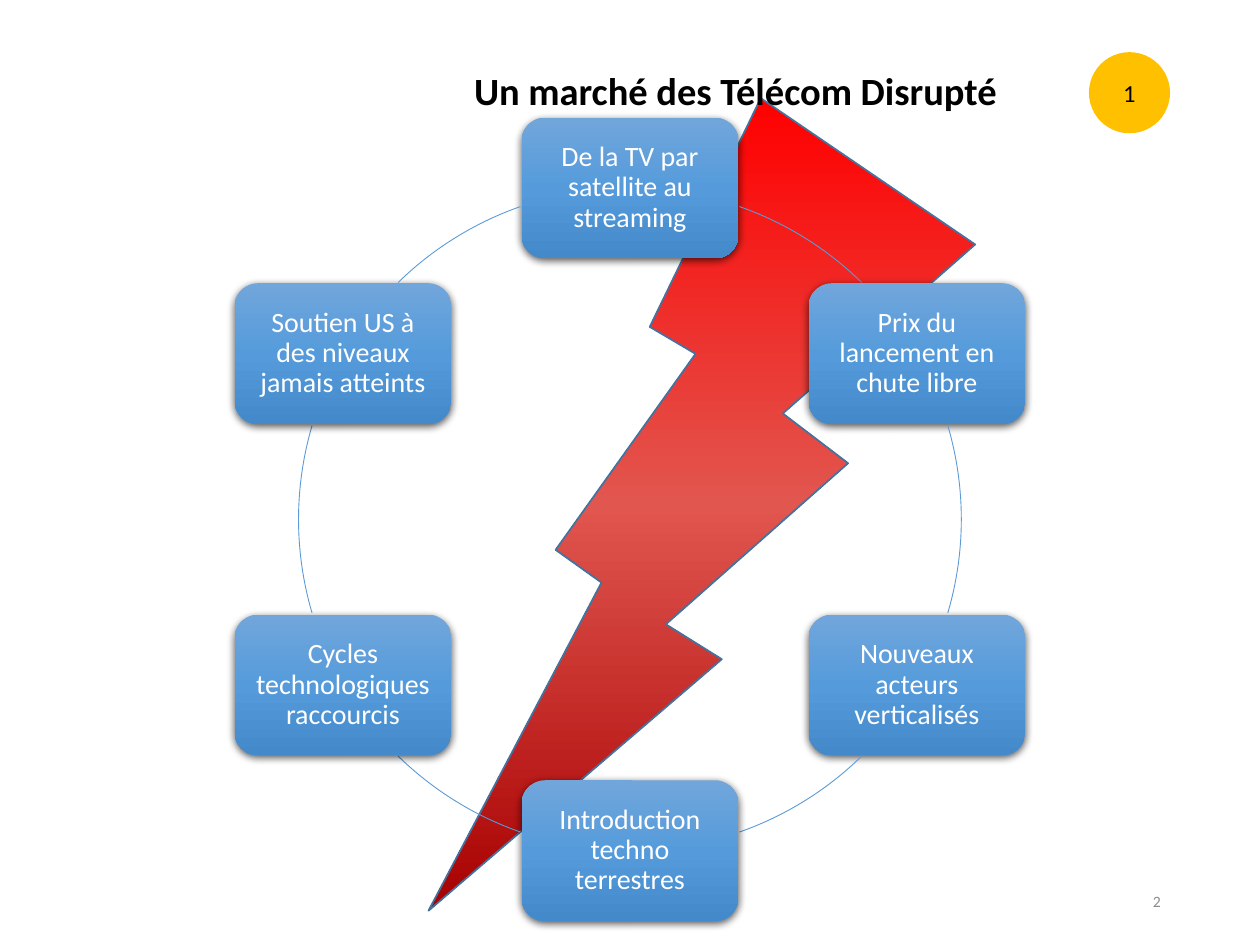
from copy import deepcopy
from math import cos, radians, sin

from lxml.etree import SubElement
from pptx import Presentation
from pptx.dml.color import RGBColor
from pptx.enum.shapes import MSO_SHAPE
from pptx.enum.text import MSO_ANCHOR, PP_ALIGN
from pptx.oxml.ns import qn
from pptx.util import Cm, Pt

COLORS = {
    "black": "000000", "white": "FFFFFF", "grey": "8C8C8C",
    "amber": "FFC000", "ring": "5B9BD5", "bolt_line": "43739E",
}
BOLT_GRADIENT = ("FF0000", "E1564F", "A70101")
STEP_GRADIENT = ("71A6DB", "559BDB", "448ACA")

# Clockwise from the top of the ring
STEPS = (
    "De la TV par satellite au streaming",
    "Prix du lancement en chute libre",
    "Nouveaux acteurs verticalisés",
    "Introduction techno terrestres",
    "Cycles technologiques raccourcis",
    "Soutien US à des niveaux jamais atteints",
)
# Visible stretches of the ring between neighbouring steps, in degrees
ARCS = ((289.3, 314.4), (343.6, 16.4), (45.6, 70.7),
        (109.3, 134.4), (163.6, 196.4), (225.6, 250.7))
CENTER_X, CENTER_Y, RADIUS = 12.7, 10.47, 6.68
STEP_WIDTH, STEP_HEIGHT = 4.37, 2.84


class SlideBuilder:
    font = "Calibri"

    def __init__(self, slide):
        self.slide = slide

    def add_text(self, shape, text, size, color, align=PP_ALIGN.CENTER,
                 bold=False, spacing=1.0, inset=None):
        frame = shape.text_frame
        frame.word_wrap = True
        frame.vertical_anchor = MSO_ANCHOR.MIDDLE
        if inset is not None:
            frame.margin_left = frame.margin_right = Cm(inset)
            frame.margin_top = frame.margin_bottom = Cm(inset)
        paragraph = frame.paragraphs[0]
        paragraph.alignment = align
        paragraph.line_spacing = spacing
        run = paragraph.add_run()
        run.text = text
        run.font.name = self.font
        run.font.size = Pt(size)
        run.font.bold = bold
        run.font.color.rgb = RGBColor.from_string(COLORS[color])

    def shape(self, kind, left, top, width, height, line=None, line_width=1):
        shape = self.slide.shapes.add_shape(
            kind, Cm(left), Cm(top), Cm(width), Cm(height))
        shape.shadow.inherit = False
        if line:
            shape.line.color.rgb = RGBColor.from_string(COLORS[line])
            shape.line.width = Pt(line_width)
        else:
            shape.line.fill.background()
        return shape

    def gradient(self, shape, colors):
        shape.fill.gradient()
        shape.fill.gradient_angle = 270
        stop_list = shape._element.spPr.find(".//" + qn("a:gsLst"))
        stop_list.append(deepcopy(stop_list[0]))
        for index, (stop, color) in enumerate(zip(shape.fill.gradient_stops, colors)):
            stop.position = index / (len(colors) - 1)
            stop.color.rgb = RGBColor.from_string(color)

    def drop_shadow(self, shape):
        effects = shape._element.spPr.find(qn("a:effectLst"))
        shadow = SubElement(effects, qn("a:outerShdw"), blurRad=str(Pt(4.5)),
                            dist=str(Pt(1.5)), dir="5400000", rotWithShape="0")
        color = SubElement(shadow, qn("a:srgbClr"), val=COLORS["black"])
        SubElement(color, qn("a:alpha"), val="63000")

    def bolt(self, left, top, width, height):
        bolt = self.shape(MSO_SHAPE.LIGHTNING_BOLT, left, top, width, height, "bolt_line")
        bolt._element.spPr.find(qn("a:xfrm")).set("flipH", "1")
        self.gradient(bolt, BOLT_GRADIENT)

    def step(self, text, angle):
        x = CENTER_X + RADIUS * cos(radians(angle))
        y = CENTER_Y + RADIUS * sin(radians(angle))
        step = self.shape(MSO_SHAPE.ROUNDED_RECTANGLE, x - STEP_WIDTH / 2,
                          y - STEP_HEIGHT / 2, STEP_WIDTH, STEP_HEIGHT)
        self.gradient(step, STEP_GRADIENT)
        self.drop_shadow(step)
        self.add_text(step, text, 16, "white", spacing=0.9, inset=0.18)

    def arc(self, start, end):
        arc = self.shape(MSO_SHAPE.ARC, CENTER_X - RADIUS, CENTER_Y - RADIUS,
                         2 * RADIUS, 2 * RADIUS, "ring", 0.5)
        arc.fill.background()
        # Angles are stored in 60000ths of a degree, adjustments in 100000ths
        arc.adjustments[0] = start * 0.6
        arc.adjustments[1] = end * 0.6

    def title(self, text, left, top, width, height):
        title = self.slide.shapes.title
        title.left, title.top = Cm(left), Cm(top)
        title.width, title.height = Cm(width), Cm(height)
        self.add_text(title, text, 22, "black", bold=True, spacing=0.9)
        # Bring the title in front of the bolt
        self.slide.shapes._spTree.append(title._element)

    def badge(self, text, left, top, size):
        badge = self.shape(MSO_SHAPE.FLOWCHART_CONNECTOR, left, top, size, size, "amber")
        badge.fill.solid()
        badge.fill.fore_color.rgb = RGBColor.from_string(COLORS["amber"])
        self.add_text(badge, text, 14, "black")

    def page_number(self, text, left, top, width, height):
        number = self.slide.shapes.add_textbox(Cm(left), Cm(top), Cm(width), Cm(height))
        self.add_text(number, text, 9, "grey", PP_ALIGN.RIGHT)


def main():
    deck = Presentation()
    deck.slide_width, deck.slide_height = Cm(25.4), Cm(19.05)
    builder = SlideBuilder(deck.slides.add_slide(deck.slide_layouts[5]))

    # Lightning bolt behind the cycle
    builder.bolt(8.64, 1.98, 11.02, 16.38)

    # Cycle of disruptions
    for index, (text, arc) in enumerate(zip(STEPS, ARCS)):
        builder.step(text, -90 + index * 360 / len(STEPS))
        builder.arc(*arc)

    # Page number, title and badge
    builder.page_number("2", 17.93, 17.65, 5.72, 1.02)
    builder.title("Un marché des Télécom Disrupté", 5.54, 1.07, 18.57, 1.6)
    builder.badge("1", 21.97, 1.07, 1.6)

    deck.save("out.pptx")


if __name__ == "__main__":
    main()
